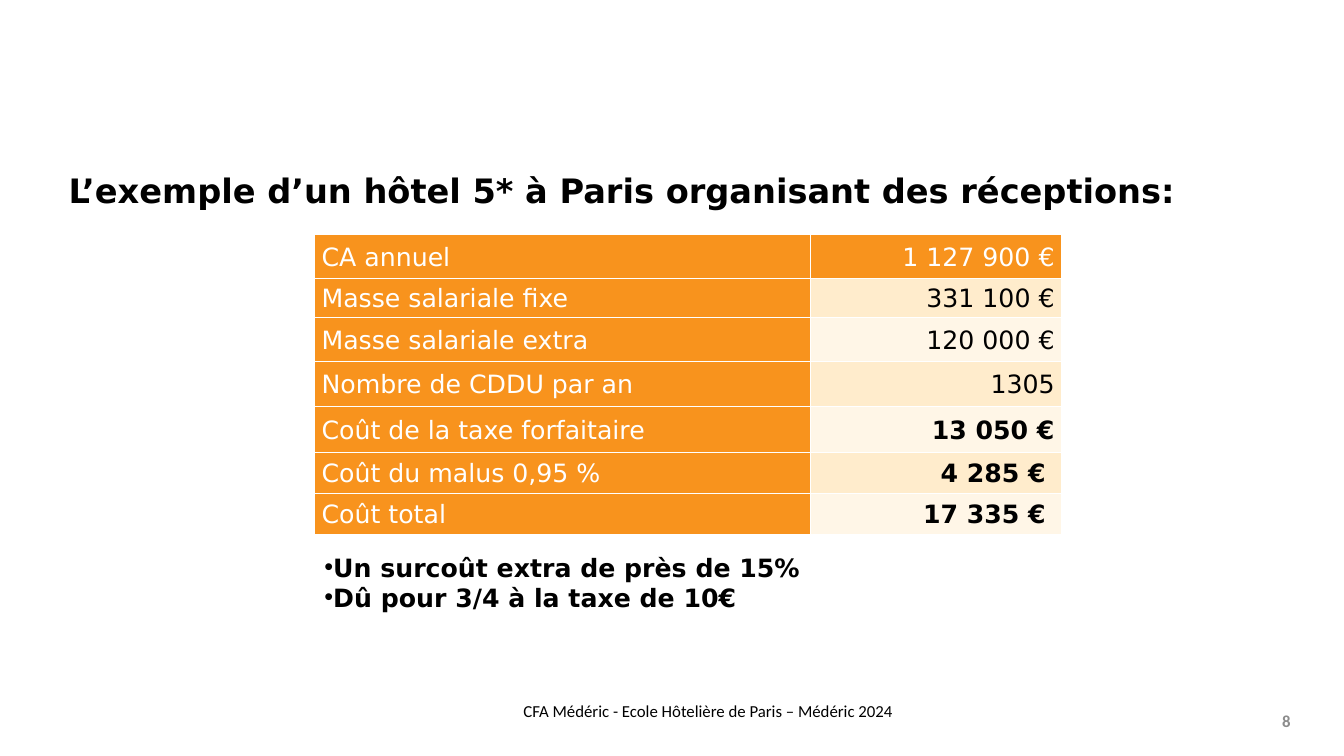
"""Build the slide on the cost of extra staff in a Paris hotel."""
import pptx
import pptx.util
import pptx.dml.color
import pptx.enum.text
import pptx.oxml
import pptx.oxml.ns
from lxml import etree

TITLE = "L’exemple d’un hôtel 5* à Paris organisant des réceptions:"
COSTS = [
    ("CA annuel", "1 127 900 €", False),
    ("Masse salariale fixe", "331 100 €", False),
    ("Masse salariale extra", "120 000 €", False),
    ("Nombre de CDDU par an", "1305", False),
    ("Coût de la taxe forfaitaire", "13 050 €", True),
    ("Coût du malus 0,95 %", "4 285 € ", True),
    ("Coût total", "17 335 € ", True),
]
NOTES = ["Un surcoût extra de près de 15%", "Dû pour 3/4 à la taxe de 10€"]
FOOTER = "CFA Médéric - Ecole Hôtelière de Paris – Médéric 2024"
PAGE = "8"

WIDTHS = [4.92, 2.49]
HEIGHTS = [0.43, 0.39, 0.44, 0.44, 0.46, 0.41, 0.4]
ORANGE, WHITE, BLACK, GREY = "F8931D", "FFFFFF", "000000", "8C8C8C"
BANDS = ["FFF6E7", "FFECCC"]
SANS = "DejaVu Sans"

Inches = pptx.util.Inches
Align = pptx.enum.text.PP_ALIGN
Anchor = pptx.enum.text.MSO_ANCHOR


def color(code):
    return pptx.dml.color.RGBColor.from_string(code)


def apply(item, values):
    for key, value in values.items():
        setattr(item, key, value)


def style(para, text, size, code, bold=False, face=SANS, **form):
    para.text = text
    font = para.font
    apply(font, {"name": face, "size": pptx.util.Pt(size), "bold": bold})
    font.color.rgb = color(code)
    apply(para, form)


def add_box(slide, place, anchor=Anchor.MIDDLE):
    frame = slide.shapes.add_textbox(*map(Inches, place)).text_frame
    apply(frame, {"word_wrap": True, "vertical_anchor": anchor})
    return frame


def add_edges(cell):
    props = cell._tc.get_or_add_tcPr()
    for rank, side in enumerate(("lnL", "lnR", "lnT", "lnB")):
        line = pptx.oxml.parse_xml(
            f'<a:{side} {pptx.oxml.ns.nsdecls("a")} w="12700"><a:solidFill>'
            f'<a:srgbClr val="{WHITE}"/></a:solidFill></a:{side}>')
        props.insert(rank, line)


def add_title(slide):
    title = slide.shapes.title
    place = map(Inches, (0.58, 1.64, 12.75, 0.5))
    apply(title, dict(zip(("left", "top", "width", "height"), place)))
    frame = title.text_frame
    apply(frame, {"word_wrap": True, "vertical_anchor": Anchor.TOP,
                  "auto_size": pptx.enum.text.MSO_AUTO_SIZE.NONE})
    style(frame.paragraphs[0], TITLE, 24, BLACK, True, alignment=Align.LEFT)


def add_costs(slide):
    place = map(Inches, (3.12, 2.33, sum(WIDTHS), sum(HEIGHTS)))
    table = slide.shapes.add_table(len(COSTS), len(WIDTHS), *place).table
    for col, width in zip(table.columns, WIDTHS):
        col.width = Inches(width)
    for i, (name, value, bold) in enumerate(COSTS):
        table.rows[i].height = Inches(HEIGHTS[i])
        plain = (name, ORANGE, WHITE, False, Align.LEFT)
        fill, ink = (BANDS[i % 2], BLACK) if i else (ORANGE, WHITE)
        pair = [plain, (value, fill, ink, bold, Align.RIGHT)]
        for j, (text, back, code, heavy, align) in enumerate(pair):
            cell = table.cell(i, j)
            apply(cell, {"margin_left": Inches(0.07), "margin_right": Inches(0.07),
                         "margin_top": 0, "margin_bottom": 0,
                         "vertical_anchor": Anchor.MIDDLE})
            cell.fill.solid()
            cell.fill.fore_color.rgb = color(back)
            add_edges(cell)
            style(cell.text_frame.paragraphs[0], text, 18, code, heavy,
                  alignment=align, line_spacing=1.07,
                  space_after=pptx.util.Pt(8))


def add_notes(slide):
    frame = add_box(slide, (3.12, 5.42, 6.07, 0.71))
    for i, note in enumerate(NOTES):
        para = frame.add_paragraph() if i else frame.paragraphs[0]
        props = para._p.get_or_add_pPr()
        for tag, key, value in (("a:buFont", "typeface", "Arial"),
                                ("a:buChar", "char", "•")):
            etree.SubElement(props, pptx.oxml.ns.qn(tag)).set(key, value)
        style(para, note, 18, BLACK, True)


def main():
    deck = pptx.Presentation()
    apply(deck, {"slide_width": Inches(13.33), "slide_height": Inches(7.5)})
    slide = deck.slides.add_slide(deck.slide_layouts[5])
    add_title(slide)
    add_costs(slide)
    add_notes(slide)
    footer = add_box(slide, (4.42, 6.85, 5.21, 0.4))
    style(footer.paragraphs[0], FOOTER, 12, BLACK, face="Calibri",
          alignment=Align.CENTER)
    page = add_box(slide, (9.42, 6.95, 3.48, 0.4))
    style(page.paragraphs[0], PAGE, 12, GREY, True, "Calibri",
          alignment=Align.RIGHT)
    deck.save("out.pptx")


if __name__ == "__main__":
    main()
